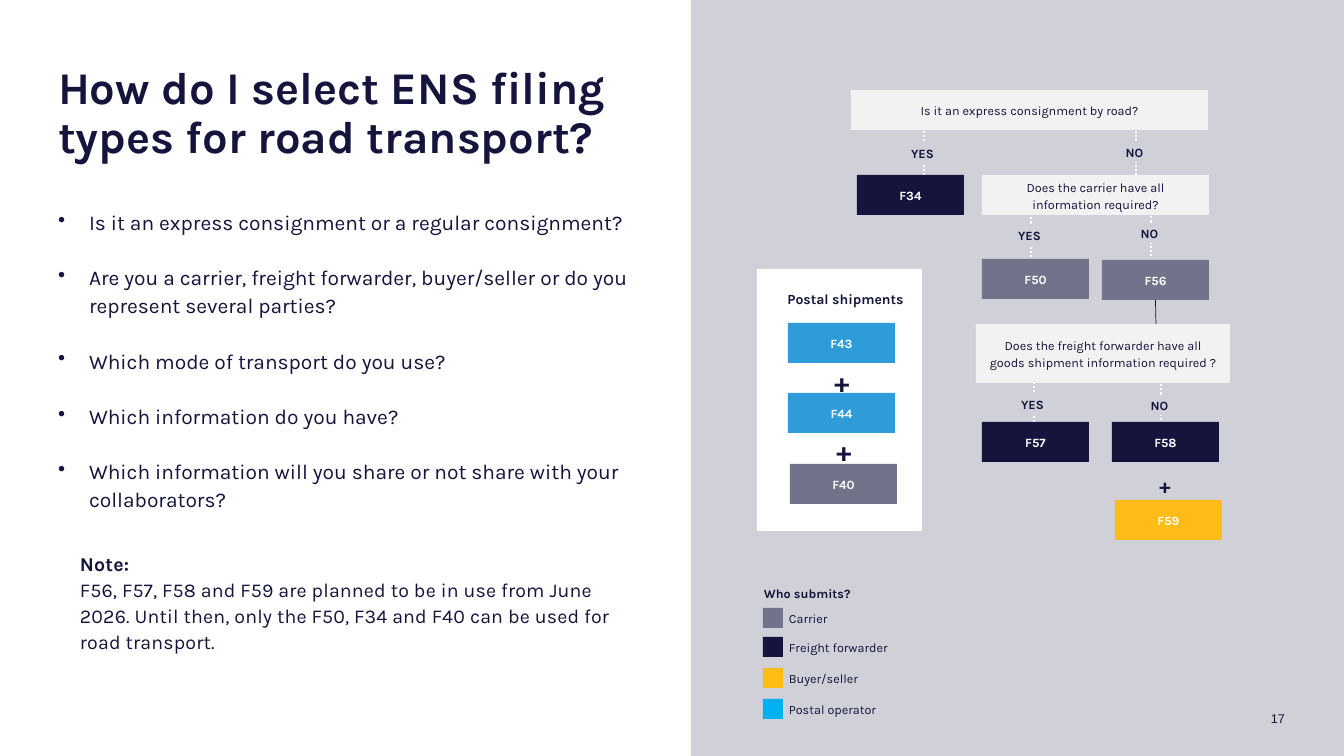
from lxml.etree import SubElement
from pptx import Presentation
from pptx.dml.color import RGBColor
from pptx.enum.dml import MSO_LINE
from pptx.enum.shapes import MSO_CONNECTOR, MSO_SHAPE
from pptx.enum.text import MSO_ANCHOR, MSO_AUTO_SIZE, PP_ALIGN
from pptx.oxml.ns import qn
from pptx.util import Pt

SCALE = 914400 / 100.8
COLORS = {
    "navy": "14143C", "slate": "72728A", "panel": "D0D0D8", "light": "F2F2F2",
    "white": "FFFFFF", "blue": "2E9CD9", "cyan": "00B0F0", "gold": "FFBB16",
}
LEFT, MID, RIGHT = PP_ALIGN.LEFT, PP_ALIGN.CENTER, PP_ALIGN.RIGHT


def emu(px):
    return round(px * SCALE)


def rgb(name):
    return RGBColor.from_string(COLORS[name])


class Deck:
    """Holds the style and the slide being built."""

    def __init__(self, font):
        self.font = font
        self.prs = Presentation()
        self.prs.slide_width, self.prs.slide_height = emu(1344), emu(756)
        self.slide = self.prs.slides.add_slide(self.prs.slide_layouts[5])
        self.shapes = self.slide.shapes

    def style(self, para, size, color="navy", bold=False, align=LEFT, lead=1.11, font=None):
        para.alignment, para.line_spacing = align, lead
        face = para.font
        face.name, face.size, face.bold = font or self.font, Pt(size), bold
        face.color.rgb = rgb(color)

    def frame(self, shape, anchor, pad):
        """Set wrapping, anchor and insets; pad is False for no insets."""
        frame = shape.text_frame
        frame.word_wrap, frame.vertical_anchor = True, anchor
        frame.auto_size = MSO_AUTO_SIZE.NONE
        if not pad:
            frame.margin_left = frame.margin_right = 0
            frame.margin_top = frame.margin_bottom = 0
        return frame

    def title(self, words, x, y, w, h):
        shape = self.shapes.title
        shape.left, shape.top, shape.width, shape.height = map(emu, (x, y, w, h))
        frame = self.frame(shape, MSO_ANCHOR.TOP, False)
        frame.text = words
        self.style(frame.paragraphs[0], 32.4, bold=True, lead=0.89)

    def text(self, words, x, y, w, h, size=9, anchor=MSO_ANCHOR.TOP, pad=False, **look):
        box = self.shapes.add_textbox(*map(emu, (x, y, w, h)))
        frame = self.frame(box, anchor, pad)
        frame.text = words
        for para in frame.paragraphs:
            self.style(para, size, **look)
        return frame

    def bullets(self, items, x, y, w, h):
        frame = self.text("\n".join(items), x, y, w, h, 15)
        for i, para in enumerate(frame.paragraphs):
            if i:
                para.space_before = Pt(19.5)
            props = para._p.get_or_add_pPr()
            props.set("marL", str(emu(31)))
            props.set("indent", str(-emu(31)))
            mark = SubElement(props, qn("a:buChar"))
            mark.set("char", "•")
            props.insert(props.index(props.find(qn("a:defRPr"))), mark)

    def note(self, head, words, x, y, w, h):
        frame = self.text(f"{head}\n{words}", x, y, w, h, 14, pad=True)
        frame.paragraphs[0].font.bold = True
        for para in frame.paragraphs:
            para.runs[0]._r.get_or_add_rPr().set("spc", "10")

    def block(self, x, y, w, h, fill, words="", kind=MSO_SHAPE.RECTANGLE, **look):
        shape = self.shapes.add_shape(kind, *map(emu, (x, y, w, h)))
        shape.shadow.inherit = False
        shape.fill.solid()
        shape.fill.fore_color.rgb = rgb(fill)
        shape.line.fill.background()
        if words:
            frame = self.frame(shape, MSO_ANCHOR.MIDDLE, True)
            frame.text = words
            self.style(frame.paragraphs[0], 9, align=MID, **look)
        return shape

    def code(self, words, x, y, fill):
        return self.block(x, y, 107, 40, fill, words, color="white", bold=True)

    def line(self, x, top, end, color, width, dash=None):
        line = self.shapes.add_connector(
            MSO_CONNECTOR.STRAIGHT, *map(emu, (x, top, x, end)))
        line.line.color.rgb = rgb(color)
        line.line.width = Pt(width)
        if dash:
            line.line.dash_style = dash
        SubElement(line._element.spPr, qn("a:effectLst"))
        return line

    def branch(self, words, x, y):
        """Draw a dotted line with its answer over a gap."""
        drop, gap = (50, 12) if words == "YES" else (45, 11)
        self.line(x, y, y + drop, "white", 1.5, MSO_LINE.ROUND_DOT)
        self.block(x - 18, y + gap, 34, 20, "panel", kind=MSO_SHAPE.OVAL)
        self.text(words, x - 21, y + gap + 1, 39, 15, bold=True, align=MID)

    def plus(self, x, y, size):
        self.text("+", x, y, 50, 34, size, bold=True, align=MID)

    def key(self, words, y, fill):
        self.block(763, y + 4, 20, 20, fill)
        self.text(words, 779, y, 160, 28, anchor=MSO_ANCHOR.MIDDLE, pad=True)


def main():
    deck = Deck("Karla")
    deck.block(691, 0, 653, 756, "panel")
    deck.title("How do I select ENS filing types for road transport?", 58, 66, 596, 100)
    deck.bullets([
        "Is it an express consignment or a regular consignment?",
        "Are you a carrier, freight forwarder, buyer/seller or do you represent several parties?",
        "Which mode of transport do you use?",
        "Which information do you have?",
        "Which information will you share or not share with your collaborators?",
    ], 58, 207, 595, 320)
    deck.note(
        "Note:",
        "F56, F57, F58 and F59 are planned to be in use from June 2026. "
        "Until then, only the F50, F34 and F40 can be used for road transport.",
        70, 544, 558, 112)

    for words, x, y in [
        ("YES", 924, 131), ("NO", 1136, 131), ("YES", 1031, 213),
        ("NO", 1151, 212), ("YES", 1034, 382), ("NO", 1161, 384),
    ]:
        deck.branch(words, x, y)
    for words, x, y, w, h in [
        ("Is it an express consignment by road?", 851, 90, 357, 40),
        ("Does the carrier have all information required?", 982, 175, 227, 40),
        ("Does the freight forwarder have all goods shipment information required ?",
         976, 324, 254, 59),
    ]:
        deck.block(x, y, w, h, "light", words)

    deck.block(757, 269, 165, 262, "white")
    deck.text("Postal shipments", 780, 289, 131, 17, 10, bold=True, align=MID)
    codes = {}
    for words, x, y, fill in [
        ("F43", 788, 323, "blue"), ("F44", 788, 393, "blue"), ("F40", 790, 464, "slate"),
        ("F34", 857, 175, "navy"), ("F50", 982, 259, "slate"), ("F56", 1102, 260, "slate"),
        ("F57", 982, 422, "navy"), ("F58", 1112, 422, "navy"), ("F59", 1115, 500, "gold"),
    ]:
        codes[words] = deck.code(words, x, y, fill)
    for x, y, size in [(817, 361, 20), (819, 430, 20), (1140, 470, 15)]:
        deck.plus(x, y, size)
    deck.line(1156, 300, 324, "navy", 0.5).begin_connect(codes["F56"], 2)

    deck.text("Who submits?", 754, 578, 182, 29, anchor=MSO_ANCHOR.MIDDLE, pad=True, bold=True)
    for words, y, fill in [
        ("Carrier", 604, "slate"), ("Freight forwarder", 633, "navy"),
        ("Buyer/seller", 664, "gold"), ("Postal operator", 695, "cyan"),
    ]:
        deck.key(words, y, fill)
    deck.text("17", 1114, 708, 171, 18, anchor=MSO_ANCHOR.BOTTOM, align=RIGHT, lead=1.0, font="Arial")
    deck.prs.save("out.pptx")


if __name__ == "__main__":
    main()
